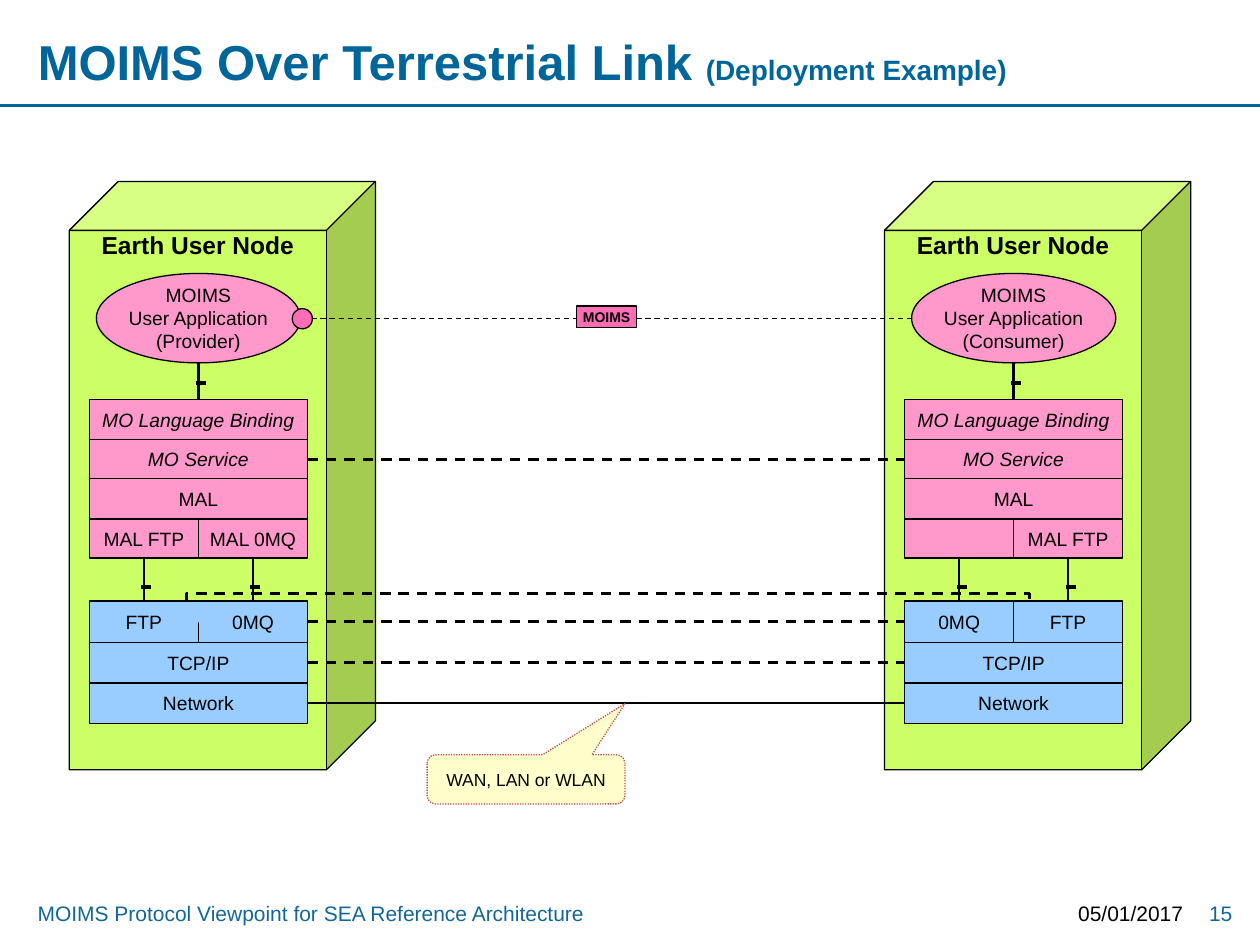
from lxml import etree
from pptx import Presentation
from pptx.dml.color import RGBColor
from pptx.enum.dml import MSO_LINE
from pptx.enum.shapes import MSO_CONNECTOR, MSO_SHAPE
from pptx.enum.text import MSO_ANCHOR, MSO_AUTO_SIZE, PP_ALIGN
from pptx.oxml.ns import qn
from pptx.util import Inches, Pt

DASH, DOT = MSO_LINE.DASH, MSO_LINE.ROUND_DOT
RECT, OVAL, CUBE = MSO_SHAPE.RECTANGLE, MSO_SHAPE.OVAL, MSO_SHAPE.CUBE
BUBBLE = MSO_SHAPE.ROUNDED_RECTANGULAR_CALLOUT
STRAIGHT = MSO_CONNECTOR.STRAIGHT
LEFT, MID, RIGHT = PP_ALIGN.LEFT, PP_ALIGN.CENTER, PP_ALIGN.RIGHT
TOP, CENTRE = MSO_ANCHOR.TOP, MSO_ANCHOR.MIDDLE
COLORS = {
    "ink": "000000", "title": "006699", "foot": "136798", "node": "CCFF66",
    "app": "FF99CC", "port": "FF6DB6", "net": "99CCFF",
    "note": "FFFFCC", "edge": "C0504D",
}
FONT = "Arial"
WIDE, HALF = 1.73, 0.865


def tint(name):
    """Return the named colour."""
    return RGBColor.from_string(COLORS[name])


def write(frame, text, size=11, color="ink", bold=False, italic=False,
          align=MID, anchor=CENTRE, pad=(0.02, 0.02), wrap=True, tail=None):
    """Fill a text frame, one paragraph a line, with an optional tail run."""
    frame.auto_size = MSO_AUTO_SIZE.NONE
    frame.word_wrap = wrap
    frame.vertical_anchor = anchor
    frame.margin_left = frame.margin_right = Inches(pad[0])
    frame.margin_top = frame.margin_bottom = Inches(pad[1])
    for i, line in enumerate(text.split("\n")):
        par = frame.paragraphs[0] if i == 0 else frame.add_paragraph()
        par.alignment = align
        runs = [(line, size)] + ([tail] if tail else [])
        for words, points in runs:
            run = par.add_run()
            run.text = words
            font = run.font
            font.name, font.size = FONT, Pt(points)
            font.bold, font.italic = bold, italic
            font.color.rgb = tint(color)


def block(slide, kind, box, fill, text="", line="ink", dash=None, **fmt):
    """Add a filled preset shape with optional text."""
    shape = slide.shapes.add_shape(kind, *map(Inches, box))
    shape.shadow.inherit = False
    shape.fill.solid()
    shape.fill.fore_color.rgb = tint(fill)
    if line:
        shape.line.color.rgb = tint(line)
        shape.line.width = Pt(0.75)
        shape.line.dash_style = dash
    else:
        shape.line.fill.background()
    if text:
        write(shape.text_frame, text, **fmt)
    return shape


def wire(slide, start, end, width=1.5, color="ink", dash=None):
    """Add a straight line; each end is a point or a (shape, side) joint."""
    points = [(0, 0) if hasattr(p[0], "shape_id") else p for p in (start, end)]
    line = slide.shapes.add_connector(
        STRAIGHT, *(Inches(v) for p in points for v in p))
    for p, join in ((start, line.begin_connect), (end, line.end_connect)):
        if hasattr(p[0], "shape_id"):
            join(*p)
    line.line.color.rgb = tint(color)
    line.line.width = Pt(width)
    line.line.dash_style = dash
    etree.SubElement(line._element.spPr, qn("a:effectLst"))


def label(slide, box, text, **fmt):
    """Add a text box."""
    area = slide.shapes.add_textbox(*map(Inches, box))
    write(area.text_frame, text, size=12, anchor=TOP, pad=(0.1, 0.05), **fmt)


def header(slide, box):
    """Place the title and the rule beneath it."""
    x, y, w, h = box
    title = slide.shapes.title
    title.left, title.top = Inches(x), Inches(y)
    title.width, title.height = Inches(w), Inches(h)
    write(title.text_frame, "MOIMS Over Terrestrial Link ", size=28,
          color="title", bold=True, align=LEFT, pad=(0.1, 0.05),
          tail=("(Deployment Example)", 16))
    wire(slide, (0, y + 0.63), (10, y + 0.63), color="title")


def footer(slide, box):
    """Place the footer text, date and page number."""
    x, y, w, h = box
    label(slide, (x, y, 8.11, h), "MOIMS Protocol Viewpoint for SEA "
          "Reference Architecture", color="foot", align=LEFT)
    label(slide, (x + 8.19, y, 1.1, h), "05/01/2017", align=RIGHT)
    label(slide, (x + w - 0.47, y, 0.47, h), "15", color="foot", align=RIGHT)


def tick(slide, x, y):
    """Add a short bar across a vertical line."""
    wire(slide, (x - 0.02, y), (x + 0.06, y), width=2.25)


def node(slide, box, role, mals, links):
    """Draw a user node with its protocol stack and return the linked cells."""
    x, y, w, h = box
    cube = block(slide, CUBE, box, "node", "Earth User Node", size=14,
                 bold=True, anchor=TOP, pad=(0.1, 0), wrap=False)
    cube.adjustments[0] = 0.16
    left = x + 0.16
    mid = left + HALF
    block(slide, OVAL, (mid - 0.81, y + 0.73, 1.62, 0.71), "app",
          f"MOIMS\nUser Application\n({role})", pad=(0, 0.05))
    cells = {}
    rows = [
        ("MO Language Binding", 1.73, 0.32, "app", True),
        ("MO Service", 2.05, 0.31, "app", True),
        ("MAL", 2.36, 0.32, "app", False),
        ("TCP/IP", 3.66, 0.32, "net", False),
        ("Network", 3.98, 0.32, "net", False),
    ]
    for text, drop, tall, fill, slant in rows:
        cells[text] = block(slide, RECT, (left, y + drop, WIDE, tall), fill,
                            text, italic=slant)
    wire(slide, (mid, y + 1.44), (cells["MO Language Binding"], 0))
    tick(slide, mid, y + 1.6)
    for i, (mal, link) in enumerate(zip(mals, links)):
        side = left + i * HALF
        upper = block(slide, RECT, (side, y + 2.68, HALF, 0.31), "app", mal)
        cells[link] = block(slide, RECT, (side, y + 3.33, HALF, 0.33),
                            "net", link)
        wire(slide, (upper, 2), (cells[link], 0))
        tick(slide, side + HALF / 2, y + 3.22)
    return cells


def bridge(slide, box):
    """Draw the dashed FTP path and the docks at its ends."""
    x, y, w, h = box
    path = slide.shapes.build_freeform(Inches(x), Inches(y + h))
    path.add_line_segments(
        [(Inches(a), Inches(b)) for a, b in
         ((x, y), (x + w, y), (x + w, y + h))], close=False)
    shape = path.convert_to_shape()
    shape.shadow.inherit = False
    shape.fill.background()
    shape.line.color.rgb = tint("ink")
    shape.line.width = Pt(1.5)
    shape.line.dash_style = DASH
    for end in (x, x + w):
        block(slide, RECT, (end - 0.1, y + h, 0.2, 0.16), "net", line=None)


def links(slide, box, near, far):
    """Draw the links between the two nodes in the box."""
    x, y, w, h = box
    wire(slide, (x, y), (x + w, y), width=0.75, dash=DASH)
    block(slide, OVAL, (x - 0.08, y - 0.08, 0.16, 0.16), "port")
    block(slide, RECT, (x + w / 2 - 0.24, y - 0.1, 0.48, 0.17), "port",
          "MOIMS", size=8, bold=True, anchor=TOP)
    for name, dash in (("MO Service", DASH), ("0MQ", DASH),
                       ("TCP/IP", DASH), ("Network", None)):
        wire(slide, (near[name], 3), (far[name], 1), dash=dash)
    bridge(slide, (1.48, 4.71, 6.69, 0.07))
    note = block(slide, BUBBLE, (x + 0.99, y + h, 1.57, 0.39), "note",
                 "WAN, LAN or WLAN", line="edge", dash=DOT, size=10,
                 pad=(0, 0))
    for i, value in enumerate((0.5, -1.54, 0.17)):
        note.adjustments[i] = value


def main():
    """Build and save the slide."""
    deck = Presentation()
    deck.slide_width, deck.slide_height = Inches(10), Inches(7.5)
    slide = deck.slides.add_slide(deck.slide_layouts[5])
    header(slide, (0.2, 0.21, 7.95, 0.55))
    near = node(slide, (0.55, 1.44, 2.43, 4.67), "Provider",
                ("MAL FTP", "MAL 0MQ"), ("FTP", "0MQ"))
    far = node(slide, (7.02, 1.44, 2.43, 4.67), "Consumer",
               ("", "MAL FTP"), ("0MQ", "FTP"))
    links(slide, (2.4, 2.53, 4.83, 3.46), near, far)
    footer(slide, (0.2, 7.1, 9.68, 0.3))
    deck.save("out.pptx")


if __name__ == "__main__":
    main()
